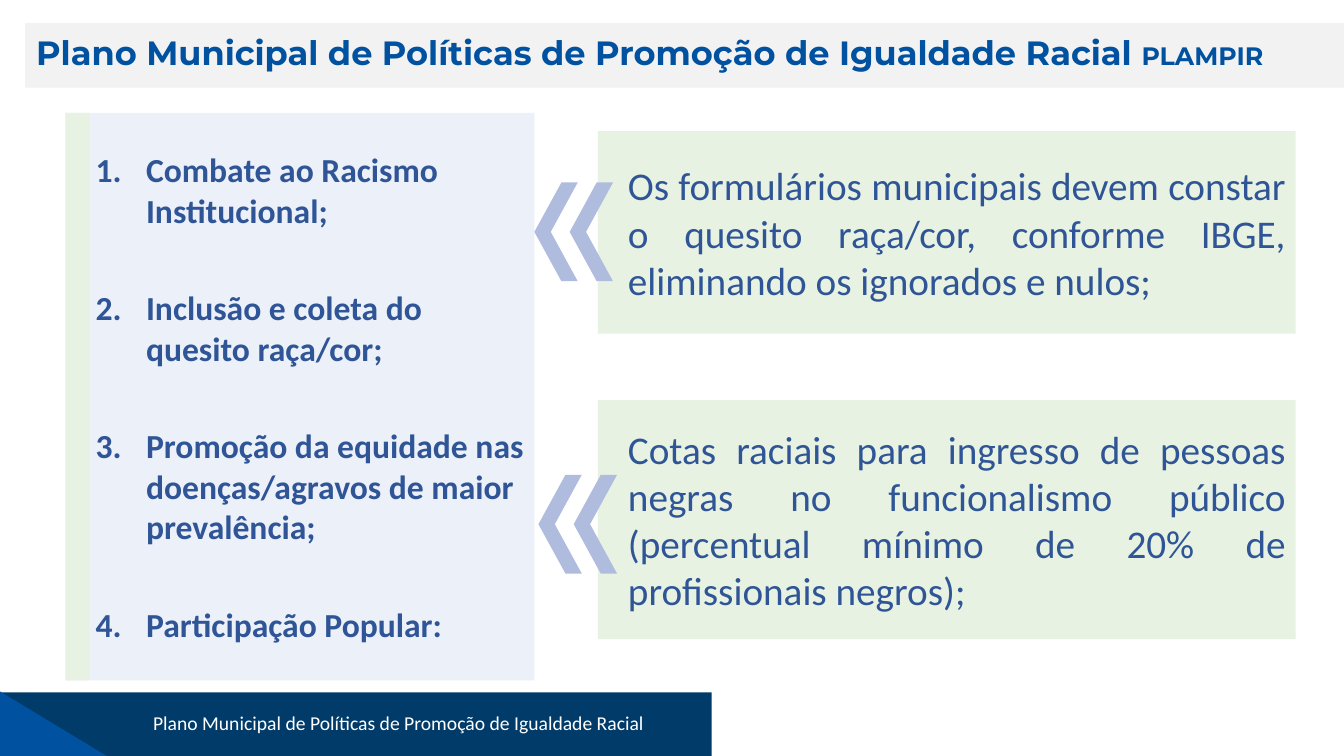
from dataclasses import dataclass

from lxml.etree import SubElement
from pptx import Presentation
from pptx.dml.color import RGBColor
from pptx.enum.shapes import MSO_SHAPE
from pptx.enum.text import MSO_ANCHOR, PP_ALIGN
from pptx.oxml.ns import qn
from pptx.util import Inches, Pt


@dataclass(frozen=True)
class Theme:
    navy: str = "003B69"
    blue: str = "00519F"
    text_blue: str = "2F5597"
    grey: str = "F2F2F2"
    pale_blue: str = "EBF0F9"
    pale_green: str = "E7F2E2"
    lilac: str = "B0BCDE"
    white: str = "FFFFFF"
    title_font: str = "Montserrat"
    body_font: str = "Calibri"
    title_size: int = 24
    acronym_size: int = 18
    list_size: int = 24
    panel_size: int = 28
    footer_size: int = 14


THEME = Theme()
PLAN_NAME = "Plano Municipal de Políticas de Promoção de Igualdade Racial"
AXES = [
    "Combate ao Racismo Institucional;",
    "Inclusão e coleta do quesito raça/cor;",
    "Promoção da equidade nas doenças/agravos de maior prevalência;",
    "Participação Popular:\u00a0",
]
# Panel box, chevron pair position, text
PANELS = [
    ((5.93, 1.3, 6.92, 2.01), (5.3, 1.81),
     "Os formulários municipais devem constar o quesito raça/cor, "
     "conforme IBGE, eliminando os ignorados e nulos;"),
    ((5.93, 3.97, 6.92, 2.37), (5.34, 4.71),
     "Cotas raciais para ingresso de pessoas negras no funcionalismo público "
     "(percentual mínimo de 20% de profissionais negros);"),
]


def add_block(slide, kind, box, color):
    shape = slide.shapes.add_shape(kind, *map(Inches, box))
    shape.shadow.inherit = False
    shape.fill.solid()
    shape.fill.fore_color.rgb = RGBColor.from_string(color)
    shape.line.fill.background()
    return shape


def add_text_box(slide, box, text, anchor):
    text_frame = slide.shapes.add_textbox(*map(Inches, box)).text_frame
    text_frame.word_wrap = True
    text_frame.vertical_anchor = anchor
    text_frame.text = text
    return text_frame.paragraphs[0]


def style_font(font, name, size, color, bold=False):
    font.name = name
    font.size = Pt(size)
    font.bold = bold
    font.color.rgb = RGBColor.from_string(color)


def set_indent(paragraph, margin, first_line=0):
    properties = paragraph._p.get_or_add_pPr()
    properties.set("marL", str(Inches(margin)))
    properties.set("indent", str(Inches(first_line)))
    return properties


def add_footer(slide, left, top, width, height):
    add_block(slide, MSO_SHAPE.RECTANGLE, (left, top, width, height), THEME.navy)
    add_block(slide, MSO_SHAPE.RIGHT_TRIANGLE, (left, top - 0.01, 1.06, height), THEME.blue)
    paragraph = add_text_box(slide, (left + 0.89, top - 0.02, 6.13, height),
                             PLAN_NAME, MSO_ANCHOR.MIDDLE)
    paragraph.alignment = PP_ALIGN.CENTER
    style_font(paragraph.runs[0].font, THEME.body_font, THEME.footer_size, THEME.white)


def add_title(slide, left, top, width, height):
    add_block(slide, MSO_SHAPE.RECTANGLE, (left, top, width, height), THEME.grey)
    paragraph = add_text_box(slide, (left + 0.01, top + 0.04, 12.82, 0.5),
                             PLAN_NAME + " ", MSO_ANCHOR.TOP)
    paragraph.add_run().text = "PLAMPIR"
    for run, size in zip(paragraph.runs, (THEME.title_size, THEME.acronym_size)):
        style_font(run.font, THEME.title_font, size, THEME.blue, bold=True)


def add_axes_list(slide, left, top, width, height):
    panel = add_block(slide, MSO_SHAPE.RECTANGLE, (left, top, width, height), THEME.pale_blue)
    add_block(slide, MSO_SHAPE.RECTANGLE, (left, top, 0.24, height), THEME.pale_green)
    text_frame = panel.text_frame
    text_frame.word_wrap = True
    text_frame.vertical_anchor = MSO_ANCHOR.MIDDLE
    text_frame.text = "\n".join(AXES)
    for index, paragraph in enumerate(text_frame.paragraphs):
        paragraph.alignment = PP_ALIGN.LEFT
        paragraph.space_before = Pt(35 if index else 0)
        paragraph.space_after = Pt(6)
        properties = set_indent(paragraph, 0.7, -0.5)
        SubElement(properties, qn("a:buFont"), typeface="+mj-lt")
        SubElement(properties, qn("a:buAutoNum"), type="arabicPeriod")
        style_font(paragraph.runs[0].font, THEME.body_font, THEME.list_size,
                   THEME.text_blue, bold=True)


def add_chevron_pair(slide, left, top):
    for offset in (0.35, 0):
        chevron = add_block(slide, MSO_SHAPE.CHEVRON, (left + offset, top, 0.43, 0.98),
                            THEME.lilac)
        chevron.adjustments[0] = 0.623
        chevron.rotation = 180


def add_action_panel(slide, box, chevron_position, text):
    panel = add_block(slide, MSO_SHAPE.RECTANGLE, box, THEME.pale_green)
    text_frame = panel.text_frame
    text_frame.word_wrap = True
    text_frame.vertical_anchor = MSO_ANCHOR.MIDDLE
    text_frame.text = text
    paragraph = text_frame.paragraphs[0]
    paragraph.alignment = PP_ALIGN.JUSTIFY
    paragraph.space_after = Pt(6)
    set_indent(paragraph, 0.2)
    style_font(paragraph.runs[0].font, THEME.body_font, THEME.panel_size, THEME.text_blue)
    add_chevron_pair(slide, *chevron_position)


def main():
    presentation = Presentation()
    presentation.slide_width = Inches(13.33)
    presentation.slide_height = Inches(7.5)
    slide = presentation.slides.add_slide(presentation.slide_layouts[6])
    add_footer(slide, 0, 6.87, 7.06, 0.64)
    add_title(slide, 0.25, 0.23, 13.08, 0.64)
    add_axes_list(slide, 0.65, 1.12, 4.65, 5.63)
    for box, chevron_position, text in PANELS:
        add_action_panel(slide, box, chevron_position, text)
    presentation.save("out.pptx")


if __name__ == "__main__":
    main()
